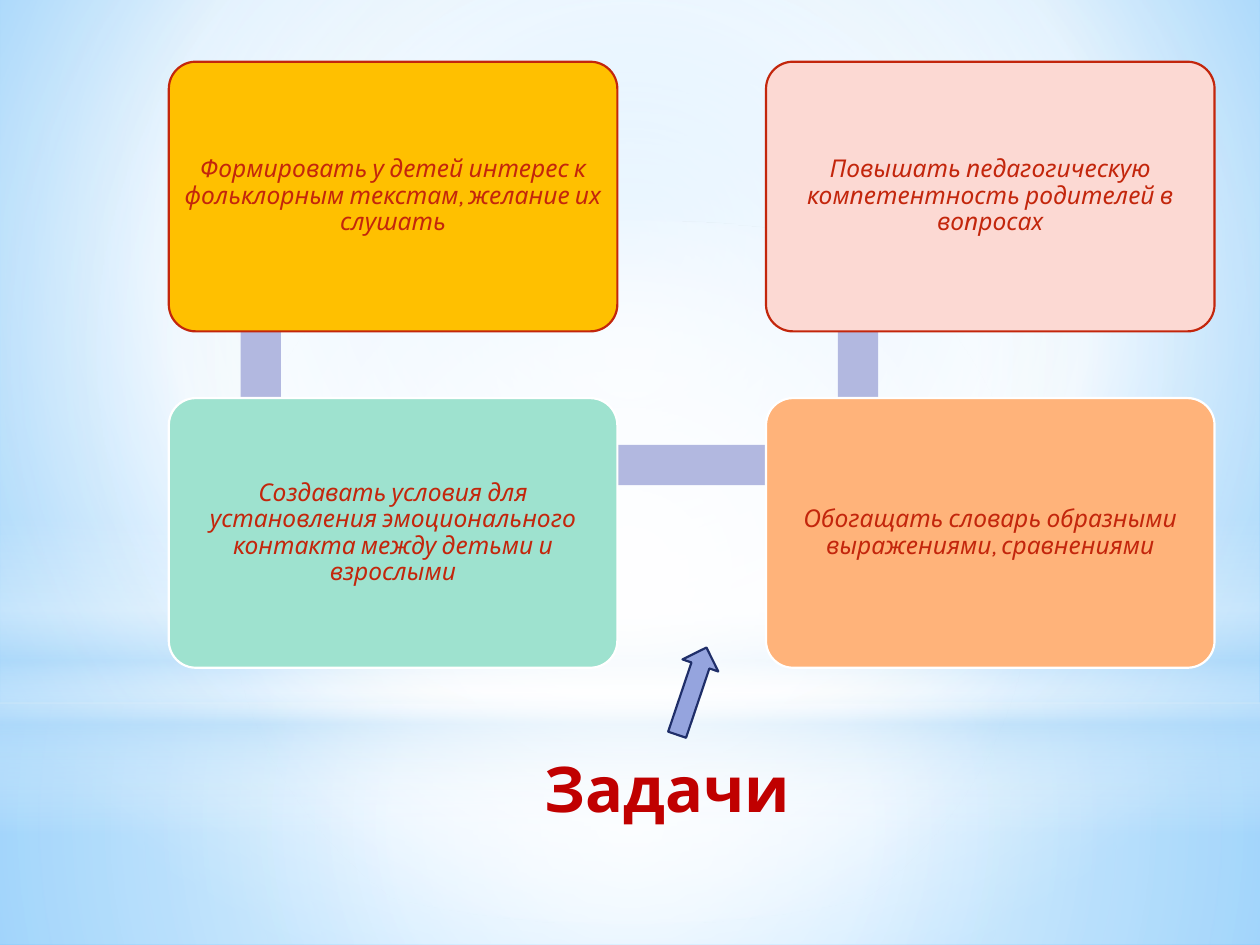
import pptx
import pptx.dml.color
import pptx.enum.shapes
import pptx.enum.text
import pptx.oxml
import pptx.oxml.ns
import pptx.util

Inches = pptx.util.Inches
Pt = pptx.util.Pt
SHAPE = pptx.enum.shapes.MSO_SHAPE
ALIGN = pptx.enum.text.PP_ALIGN
ANCHOR = pptx.enum.text.MSO_ANCHOR

FONT = "Karla"
RED = "C3260C"
WHITE = "FFFFFF"
SKY = "B4DCFA"
BAR = "B2B8E0"

COLUMNS = (1.34, 6.08)
ROWS = (0.49, 3.16)
CARD_WIDTH, CARD_HEIGHT = 3.56, 2.14
BAR_WIDTH = 0.32
BAR_INSET = 0.57

# column, row, fill, outline, text
CARDS = [
    (0, 0, "FFC000", RED,
     "Формировать у детей интерес к фольклорным текстам, желание их слушать"),
    (0, 1, "9EE2CF", WHITE,
     "Создавать условия для установления эмоционального контакта между детьми и взрослыми"),
    (1, 1, "FFB37A", WHITE,
     "Обогащать словарь образными выражениями, сравнениями"),
    (1, 0, "FCD9D3", RED,
     "Повышать педагогическую компетентность родителей в вопросах"),
]

CENTRE = (50, 50, 50, 50)

# shape, left, top, width, height, stops (position, colour, opacity), focus
GLOWS = [
    (SHAPE.RECTANGLE, 0, 5.58, 10, 1.92,
     [(0, WHITE, 91), (37, WHITE, 76), (100, SKY, 79)], CENTRE),
    (SHAPE.RECTANGLE, 0, 0, 10, 5.58,
     [(0, WHITE, 89), (48, WHITE, 62), (100, SKY, 79)], CENTRE),
    (SHAPE.RECTANGLE, 0, 4.12, 10, 2.5,
     [(0, WHITE, 0), (29, WHITE, 30), (45, SKY, 40),
      (55, WHITE, 26), (65, SKY, 60), (100, WHITE, 0)], None),
    (SHAPE.OVAL, 0, 1.75, 10, 5.58,
     [(0, WHITE, 100), (56, WHITE, 0)], CENTRE),
]


def colour(value):
    return pptx.dml.color.RGBColor.from_string(value)


def set_gradient(fill, element, stops, focus):
    """Fill radially around focus (left, top, right, bottom in percent), or downwards if None."""
    fill.solid()
    solid = element.xpath(".//a:solidFill")[0]
    stop_xml = "".join(
        f'<a:gs pos="{position * 1000}"><a:srgbClr val="{value}">'
        f'<a:alpha val="{opacity * 1000}"/></a:srgbClr></a:gs>'
        for position, value, opacity in stops)
    if focus is None:
        direction = '<a:lin ang="5400000" scaled="0"/>'
    else:
        edges = " ".join(f'{side}="{percent * 1000}"' for side, percent in zip("ltrb", focus))
        direction = f'<a:path path="circle"><a:fillToRect {edges}/></a:path>'
    gradient = pptx.oxml.parse_xml(
        f'<a:gradFill {pptx.oxml.ns.nsdecls("a")} rotWithShape="1">'
        f"<a:gsLst>{stop_xml}</a:gsLst>{direction}</a:gradFill>")
    solid.getparent().replace(solid, gradient)


def add_shape(slide, kind, left, top, width, height, fill=None, outline=None):
    shape = slide.shapes.add_shape(
        kind, Inches(left), Inches(top), Inches(width), Inches(height))
    shape.shadow.inherit = False
    if fill:
        shape.fill.solid()
        shape.fill.fore_color.rgb = colour(fill)
    if outline:
        shape.line.color.rgb = colour(outline)
        shape.line.width = Pt(1.25)
    else:
        shape.line.fill.background()
    return shape


def set_font(paragraph, size, value, bold=False, italic=False):
    font = paragraph.font
    font.name = FONT
    font.size = Pt(size)
    font.color.rgb = colour(value)
    font.bold = bold
    font.italic = italic


def add_background(slide):
    set_gradient(slide.background.fill, slide.element,
                 [(0, "9ED5FF", 100), (60, WHITE, 100), (100, "5BB9FF", 100)],
                 (20, 10, 20, 60))
    for kind, left, top, width, height, stops, focus in GLOWS:
        glow = add_shape(slide, kind, left, top, width, height)
        set_gradient(glow.fill, glow.element, stops, focus)


def add_bars(slide):
    """Link the cards down the left, across the bottom and up the right."""
    bar_top = ROWS[0] + CARD_HEIGHT / 4
    for left in COLUMNS:
        add_shape(slide, SHAPE.RECTANGLE, left + BAR_INSET, bar_top,
                  BAR_WIDTH, 2.66, BAR)
    add_shape(slide, SHAPE.RECTANGLE, 2.07, 3.53, 4.72, BAR_WIDTH, BAR)


def add_card(slide, column, row, fill, outline, text):
    card = add_shape(slide, SHAPE.ROUNDED_RECTANGLE, COLUMNS[column], ROWS[row],
                     CARD_WIDTH, CARD_HEIGHT, fill, outline)
    card.adjustments[0] = 0.1
    frame = card.text_frame
    frame.word_wrap = True
    frame.vertical_anchor = ANCHOR.MIDDLE
    frame.margin_left = frame.margin_right = Inches(0.06)
    frame.margin_top = frame.margin_bottom = Inches(0.06)
    paragraph = frame.paragraphs[0]
    paragraph.text = text
    paragraph.alignment = ALIGN.CENTER
    paragraph.line_spacing = 0.9
    set_font(paragraph, 14, RED, italic=True)


def set_title(slide, text):
    title = slide.shapes.title
    title.left, title.top = Inches(-0.75), Inches(5.9)
    title.width, title.height = Inches(7.12), Inches(1.25)
    title.text_frame.vertical_anchor = ANCHOR.TOP
    paragraph = title.text_frame.paragraphs[0]
    paragraph.text = text
    paragraph.alignment = ALIGN.RIGHT
    set_font(paragraph, 36, "C00000", bold=True)


def main():
    deck = pptx.Presentation()
    deck.slide_width, deck.slide_height = Inches(10), Inches(7.5)
    slide = deck.slides.add_slide(deck.slide_layouts.get_by_name("Title Only"))
    add_background(slide)
    add_bars(slide)
    for card in CARDS:
        add_card(slide, *card)
    set_title(slide, "Задачи")
    # The title is created first, so bring it in front of the background glows.
    slide.shapes.title.element.getparent().append(slide.shapes.title.element)
    arrow = add_shape(slide, SHAPE.DOWN_ARROW, 5.34, 5.12, 0.3, 0.73, "95A4DE", "1F2E69")
    arrow.rotation = 198.6
    deck.save("out.pptx")


if __name__ == "__main__":
    main()
